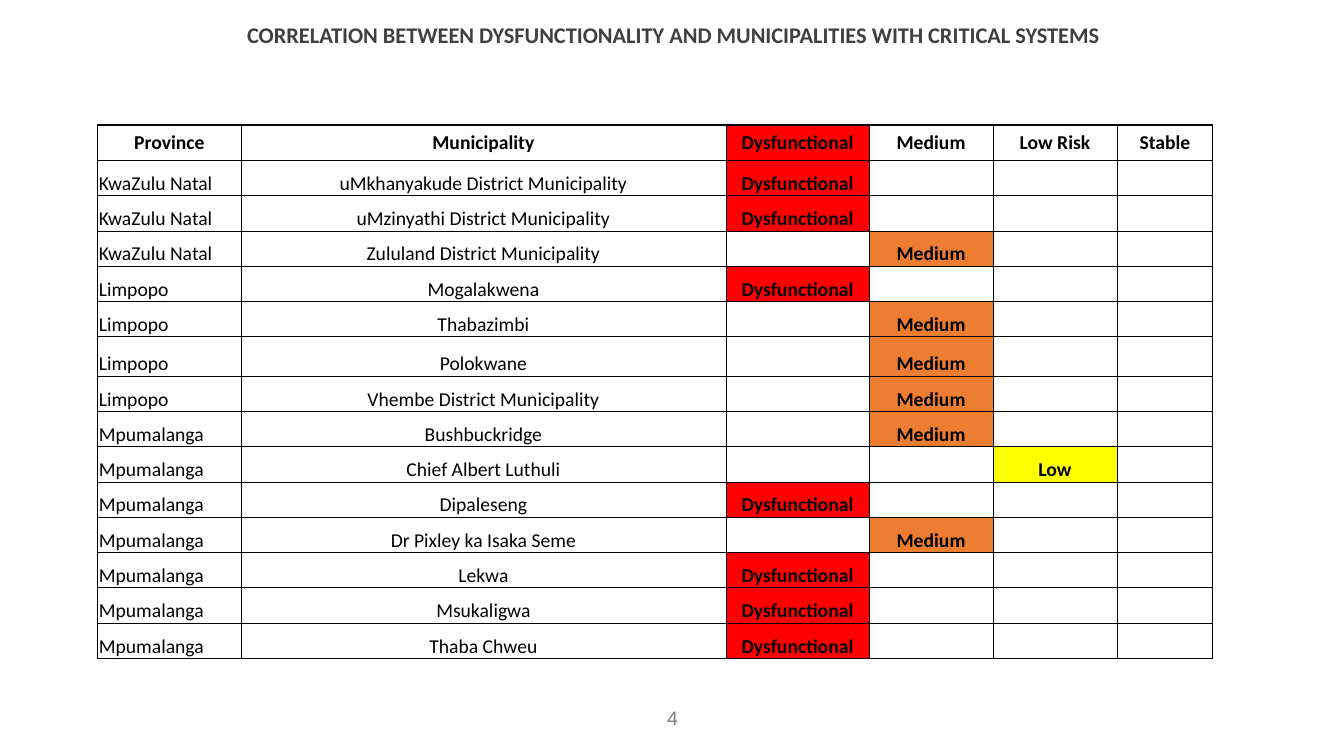
from typing import NamedTuple

from lxml import etree
from pptx import Presentation
from pptx import util as u
from pptx.dml import color
from pptx.enum import text
from pptx.oxml import ns

COLOURS = {
    "black": "000000",
    "title": "404040",
    "number": "808080",
    "Dysfunctional": "FF0000",
    "Medium": "ED7D31",
    "Low": "FFFF00",
}
HEADINGS = ["Province", "Municipality", "Dysfunctional", "Medium", "Low Risk", "Stable"]
STATUS_COLUMN = {"Dysfunctional": 2, "Medium": 3, "Low": 4}
COLUMN_WIDTHS = [1.42, 4.81, 1.42, 1.23, 1.23, 0.95]
ROW_HEIGHT = 0.35
TALL_ROWS = {"Polokwane": 0.39}
THIN, THICK = 0.5, 1


class Municipality(NamedTuple):
    province: str
    name: str
    status: str


class Style(NamedTuple):
    size: float
    colour: str
    bold: bool = False
    align: text.PP_ALIGN = text.PP_ALIGN.CENTER
    font: str = "Calibri"


MUNICIPALITIES = [
    Municipality("KwaZulu Natal", "uMkhanyakude District Municipality", "Dysfunctional"),
    Municipality("KwaZulu Natal", "uMzinyathi District Municipality", "Dysfunctional"),
    Municipality("KwaZulu Natal", "Zululand District Municipality", "Medium"),
    Municipality("Limpopo", "Mogalakwena", "Dysfunctional"),
    Municipality("Limpopo", "Thabazimbi", "Medium"),
    Municipality("Limpopo", "Polokwane", "Medium"),
    Municipality("Limpopo", "Vhembe District Municipality", "Medium"),
    Municipality("Mpumalanga", "Bushbuckridge", "Medium"),
    Municipality("Mpumalanga", "Chief Albert Luthuli", "Low"),
    Municipality("Mpumalanga", "Dipaleseng", "Dysfunctional"),
    Municipality("Mpumalanga", "Dr Pixley ka Isaka Seme", "Medium"),
    Municipality("Mpumalanga", "Lekwa", "Dysfunctional"),
    Municipality("Mpumalanga", "Msukaligwa", "Dysfunctional"),
    Municipality("Mpumalanga", "Thaba Chweu", "Dysfunctional"),
]


def write(frame, words: str, style: Style) -> None:
    """Set one paragraph of text and format it."""
    frame.text = words
    para = frame.paragraphs[0]
    para.alignment = style.align
    for span in para.runs:
        span.font.name = style.font
        span.font.size = u.Pt(style.size)
        span.font.bold = style.bold
        span.font.color.rgb = color.RGBColor.from_string(COLOURS[style.colour])


def set_borders(cell, left: float, right: float, top: float, bottom: float) -> None:
    """Draw the four cell borders; widths are in points."""
    properties = cell._tc.get_or_add_tcPr()
    for side, width in zip("LRTB", (left, right, top, bottom)):
        line = etree.SubElement(properties, ns.qn(f"a:ln{side}"), w=str(u.Pt(width)))
        fill = etree.SubElement(line, ns.qn("a:solidFill"))
        etree.SubElement(fill, ns.qn("a:srgbClr"), val=COLOURS["black"])


def set_fill(cell, colour: str) -> None:
    if colour in STATUS_COLUMN:
        cell.fill.solid()
        cell.fill.fore_color.rgb = color.RGBColor.from_string(COLOURS[colour])
    else:
        cell.fill.background()


def row_words(entry: Municipality) -> list[str]:
    """Place the status word in its own column."""
    words = [entry.province, entry.name, "", "", "", ""]
    words[STATUS_COLUMN[entry.status]] = entry.status
    return words


def add_status_table(page) -> None:
    rows = [HEADINGS] + [row_words(entry) for entry in MUNICIPALITIES]
    heights = [TALL_ROWS.get(words[1], ROW_HEIGHT) for words in rows]
    table = page.shapes.add_table(
        len(rows), len(HEADINGS), u.Inches(0.97), u.Inches(1.24),
        u.Inches(sum(COLUMN_WIDTHS)), u.Inches(sum(heights))).table
    table.first_row = table.horz_banding = False
    for column, width in zip(table.columns, COLUMN_WIDTHS):
        column.width = u.Inches(width)

    # A thick rule closes each province
    provinces = [words[0] for words in rows] + [""]
    rules = [THICK] + [
        THICK if i and provinces[i] != provinces[i + 1] else THIN
        for i in range(len(rows))]

    for i, words in enumerate(rows):
        table.rows[i].height = u.Inches(heights[i])
        for j, word in enumerate(words):
            cell = table.cell(i, j)
            cell.margin_left = cell.margin_right = cell.margin_top = u.Inches(0.01)
            cell.margin_bottom = 0
            header = i == 0
            cell.vertical_anchor = (
                text.MSO_ANCHOR.MIDDLE if header else text.MSO_ANCHOR.BOTTOM)
            align = text.PP_ALIGN.LEFT if j == 0 and not header else text.PP_ALIGN.CENTER
            write(cell.text_frame, word, Style(14, "black", header or j > 1, align))
            set_borders(cell,
                        THICK if j == 0 else THIN,
                        THICK if j == len(words) - 1 else THIN,
                        rules[i], rules[i + 1])
            set_fill(cell, "" if header and j != 2 else word)


def main() -> None:
    deck = Presentation()
    deck.slide_width, deck.slide_height = u.Inches(13.33), u.Inches(7.5)
    page = deck.slides.add_slide(deck.slide_layouts[5])

    # Title
    title = page.shapes.title
    title.left, title.top = u.Inches(0.8), u.Inches(0.19)
    title.width, title.height = u.Inches(11.76), u.Inches(0.45)
    title.text_frame.vertical_anchor = text.MSO_ANCHOR.TOP
    write(title.text_frame,
          "CORRELATION BETWEEN DYSFUNCTIONALITY AND MUNICIPALITIES WITH CRITICAL SYSTEMS",
          Style(16, "title", True))
    title.text_frame.paragraphs[0].line_spacing = 0.9

    # Table
    add_status_table(page)

    # Page number
    box = page.shapes.add_textbox(
        u.Inches(5.17), u.Inches(6.95), u.Inches(3), u.Inches(0.4))
    box.text_frame.word_wrap = True
    write(box.text_frame, "4", Style(14, "number", font="Arial"))

    deck.save("out.pptx")


if __name__ == "__main__":
    main()
